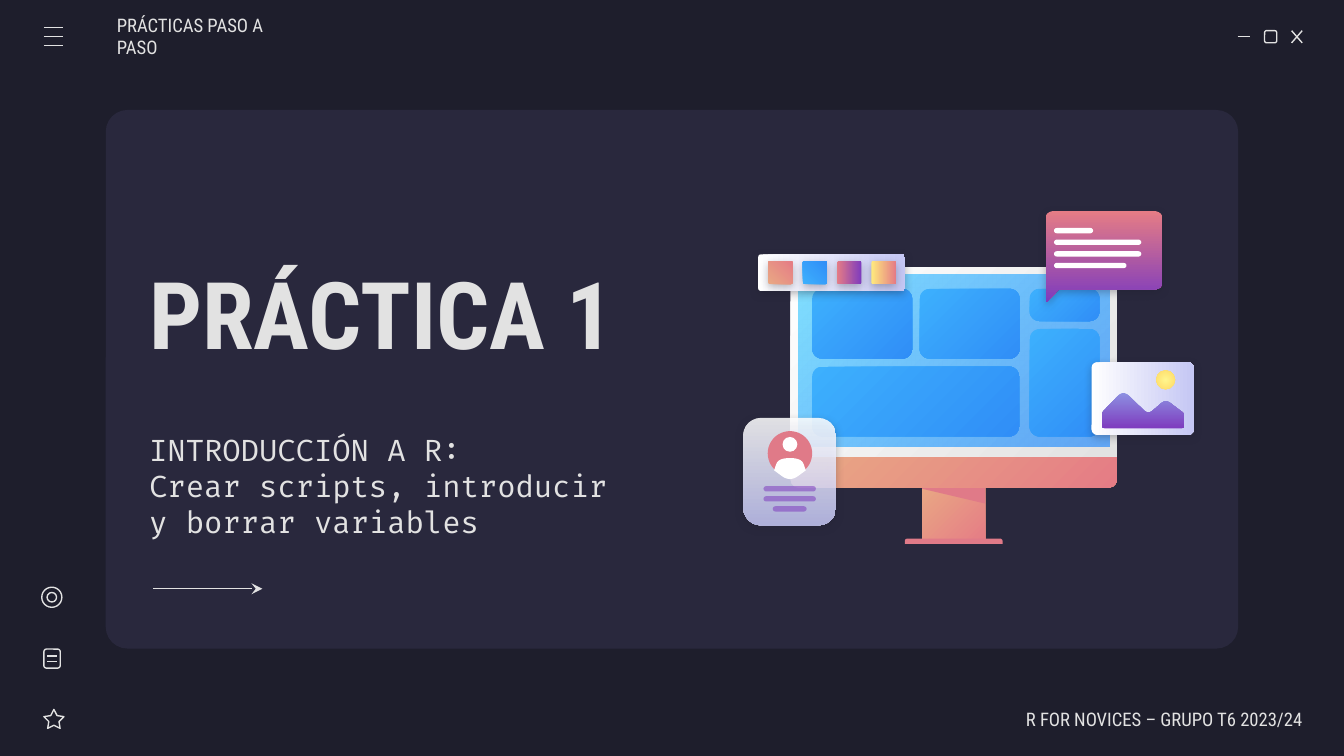
from dataclasses import dataclass

import pptx
import pptx.dml.color
import pptx.enum.shapes
import pptx.enum.text
import pptx.oxml.ns
import pptx.oxml.xmlchemy
import pptx.util

Cm = pptx.util.Cm
Pt = pptx.util.Pt
qn = pptx.oxml.ns.qn
KIND = pptx.enum.shapes.MSO_SHAPE
ALIGN = pptx.enum.text.PP_ALIGN

COLORS = {
    "night": "1E1E2C", "panel": "29283D", "light": "E2E2E2", "white": "FFFFFF",
    "peach": "E9A984", "coral": "E57C85", "rose": "E07A88", "purple": "7E3BBE",
    "lilac": "C5C7F4", "iris": "8D90E1", "cyan": "80DFFF", "azure": "318FFA",
    "sky": "3DB0FD", "blue": "308EF7", "lemon": "FFF68E", "gold": "FFD966",
    "yellow": "FFEA7D",
}


@dataclass
class Box:
    left: float
    top: float
    width: float
    height: float

    def inner(self, left, top, width, height):
        return Box(self.left + left, self.top + top, width, height)

    def lengths(self):
        return [Cm(value) for value in (self.left, self.top, self.width, self.height)]


@dataclass
class Gradient:
    start: str
    end: str
    angle: int = 45
    opacity: tuple = (100, 100)
    radial: bool = False


WARM = Gradient("peach", "coral")
TILE = Gradient("sky", "blue")
CARD = Gradient("white", "lilac", 0)


def rgb(name):
    return pptx.dml.color.RGBColor.from_string(COLORS[name])


def add_xml(parent, tag, **attributes):
    child = pptx.oxml.xmlchemy.OxmlElement(tag)
    for name, value in attributes.items():
        child.set(name, str(value))
    parent.append(child)
    return child


def paint(shape, fill, opacity=100, line=None, shadow=False):
    if isinstance(fill, Gradient):
        shape.fill.gradient()
        shape.fill.gradient_angle = (360 - fill.angle) % 360
        for stop, name in zip(shape.fill.gradient_stops, (fill.start, fill.end)):
            stop.color.rgb = rgb(name)
        opacities = fill.opacity
        if fill.radial:
            linear = next(shape._element.spPr.iter(qn("a:lin")))
            parent = linear.getparent()
            parent.remove(linear)
            circle = add_xml(parent, "a:path", path="circle")
            add_xml(circle, "a:fillToRect", l=50000, t=50000, r=50000, b=50000)
    elif fill:
        shape.fill.solid()
        shape.fill.fore_color.rgb = rgb(fill)
        opacities = (opacity,)
    else:
        shape.fill.background()
        opacities = ()
    for color, share in zip(list(shape._element.spPr.iter(qn("a:srgbClr"))), opacities):
        if share < 100:
            add_xml(color, "a:alpha", val=share * 1000)
    if line:
        shape.line.color.rgb = rgb(line)
        shape.line.width = Pt(0.75)
    else:
        shape.line.fill.background()
    shape.shadow.inherit = False
    if shadow:
        effects = shape._element.spPr.find(qn("a:effectLst"))
        outer = add_xml(effects, "a:outerShdw", blurRad=int(Pt(4.5)), dist=int(Pt(1.5)),
                        dir=5400000, algn="bl", rotWithShape=0)
        add_xml(add_xml(outer, "a:srgbClr", val=COLORS["night"]), "a:alpha", val=30000)


def add_preset(slide, kind, box, fill=None, radii=(), **style):
    shape = slide.shapes.add_shape(kind, *box.lengths())
    for index, radius in enumerate(radii):
        shape.adjustments[index] = radius / min(box.width, box.height)
    paint(shape, fill, **style)
    return shape


def add_rounded(slide, box, fill=None, radius=0.05, **style):
    return add_preset(slide, KIND.ROUNDED_RECTANGLE, box, fill, (radius,), **style)


def add_outline(slide, box, corners, fill, **style):
    points = []
    for index, (x, y, radius) in enumerate(corners):
        ends = []
        for other in (corners[index - 1], corners[(index + 1) % len(corners)]):
            dx, dy = other[0] - x, other[1] - y
            share = min(0.5, radius / (dx * dx + dy * dy) ** 0.5)
            ends.append((x + dx * share, y + dy * share))
        (ax, ay), (bx, by) = ends
        for t in [step / 8 for step in range(9)] if radius else [0]:
            points.append(tuple(
                Cm(base + (1 - t) ** 2 * a + 2 * t * (1 - t) * c + t * t * b)
                for base, a, c, b in ((box.left, ax, x, bx), (box.top, ay, y, by))))
    builder = slide.shapes.build_freeform(*points[0], scale=1.0)
    builder.add_line_segments(points[1:], close=True)
    paint(builder.convert_to_shape(), fill, **style)


def add_line(slide, box, x1, y1, x2, y2, arrow=False):
    line = slide.shapes.add_connector(
        pptx.enum.shapes.MSO_CONNECTOR.STRAIGHT, Cm(box.left + x1), Cm(box.top + y1),
        Cm(box.left + x2), Cm(box.top + y2))
    line.line.color.rgb = rgb("light")
    line.line.width = Pt(0.75)
    properties = line._element.spPr
    if arrow:
        add_xml(properties.find(qn("a:ln")), "a:tailEnd", type="stealth")
    add_xml(properties, "a:effectLst")


def add_text(slide, box, lines, size, font="Roboto Condensed", bold=False,
             align=ALIGN.LEFT, left=0.25, right=0.25):
    frame = slide.shapes.add_textbox(*box.lengths()).text_frame
    frame.word_wrap = True
    frame.vertical_anchor = pptx.enum.text.MSO_ANCHOR.MIDDLE
    frame.margin_left, frame.margin_right = Cm(left), Cm(right)
    frame.margin_top = frame.margin_bottom = Cm(0.25)
    frame.text = "\n".join(lines)
    for paragraph in frame.paragraphs:
        paragraph.alignment = align
        paragraph.font.name = font
        paragraph.font.size = Pt(size)
        paragraph.font.bold = bold
        paragraph.font.color.rgb = rgb("light")


def draw_window_buttons(slide, box):
    add_line(slide, box, 0, 0.11, 0.23, 0.11)
    add_rounded(slide, box.inner(0.51, 0, 0.23, 0.23), radius=0.04, line="light")
    add_line(slide, box, 1.02, 0, 1.22, 0.23)
    add_line(slide, box, 1.22, 0, 1.02, 0.23)


def draw_menu(slide, box):
    for row in range(3):
        y = row * box.height / 2
        add_line(slide, box, 0, y, box.width, y)


def draw_side_icons(slide, box):
    add_preset(slide, KIND.OVAL, box.inner(0, 0, 0.38, 0.38), line="light")
    add_preset(slide, KIND.OVAL, box.inner(0.1, 0.1, 0.18, 0.18), line="light")
    add_rounded(slide, box.inner(0.04, 1.17, 0.31, 0.36), line="light")
    for y in (1.3, 1.4):
        add_line(slide, box, 0.1, y, 0.28, y)
    star = add_preset(slide, KIND.STAR_5_POINT, box.inner(0.04, 2.31, 0.38, 0.36), line="light")
    star.adjustments[0] = 0.254


def draw_monitor(slide, box):
    add_preset(slide, KIND.RECTANGLE, box.inner(2.49, 4.11, 1.19, 1.09), WARM)
    add_preset(slide, KIND.ROUND_2_SAME_RECTANGLE, box.inner(2.16, 5.13, 1.85, 0.1), "rose",
               (0.05, 0))
    add_outline(slide, box, [(2.49, 4.11, 0), (2.49, 4.19, 0), (3.68, 4.47, 0), (3.68, 4.11, 0)],
                "rose")
    add_preset(slide, KIND.ROUND_2_SAME_RECTANGLE, box.inner(0, 3.56, box.width, 0.61), WARM,
               (0, 0.16))
    add_preset(slide, KIND.ROUND_2_SAME_RECTANGLE, box.inner(0, 0, box.width, 3.58),
               Gradient("white", "light"), (0.16, 0))
    add_preset(slide, KIND.RECTANGLE, box.inner(0.15, 0.15, 5.87, 3.25),
               Gradient("cyan", "azure", opacity=(100, 72)))
    for tile in ((0.41, 0.41, 1.89, 1.32), (0.41, 1.88, 3.91, 1.32), (2.44, 0.41, 1.89, 1.32),
                 (4.52, 0.41, 1.32, 0.61), (4.52, 1.17, 1.32, 2.03)):
        add_rounded(slide, box.inner(*tile), TILE, 0.19)


def draw_speech_bubble(slide, box):
    base = 1.48
    add_outline(slide, box, [
        (0, 0, 0.17), (0, box.height, 0.05), (0.25, base, 0), (box.width, base, 0.17),
        (box.width, 0, 0.17)], Gradient("coral", "purple", 90), shadow=True)
    for row, width in enumerate((0.74, 1.65, 1.65, 1.37)):
        add_rounded(slide, box.inner(0.16, 0.32 + row * 0.22, width, 0.1), "white")


def draw_profile_card(slide, box):
    add_rounded(slide, box, Gradient("white", "lilac", 90, (86, 86)), 0.33, shadow=True)
    add_preset(slide, KIND.OVAL, box.inner(0.46, 0.25, 0.84, 0.84), "rose")
    add_preset(slide, KIND.OVAL, box.inner(0.74, 0.36, 0.28, 0.28), "white")
    add_outline(slide, box, [
        (0.58, 0.99, 0), (0.66, 0.76, 0.2), (1.1, 0.76, 0.2), (1.18, 0.99, 0),
        (0.88, 1.21, 0.3)], "white")
    for row, width in enumerate((0.99, 0.99, 0.64)):
        add_rounded(slide, box.inner((box.width - width) / 2, 1.29 + row * 0.19, width, 0.1),
                    "purple", opacity=54)


def draw_photo_card(slide, box):
    add_rounded(slide, box, CARD, 0.1, shadow=True)
    add_outline(slide, box, [
        (0.2, 0.95, 0.04), (0.6, 0.53, 0.14), (1.07, 0.99, 0.12), (1.4, 0.7, 0.12),
        (1.75, 0.97, 0.04), (1.75, 1.25, 0.07), (0.2, 1.25, 0.07)],
        Gradient("iris", "purple", 90))
    add_preset(slide, KIND.OVAL, box.inner(1.22, 0.15, 0.36, 0.36),
               Gradient("lemon", "gold", radial=True))


def draw_swatch_bar(slide, box):
    add_rounded(slide, box, CARD, shadow=True)
    swatches = (Gradient("peach", "coral", 315), Gradient("sky", "blue", 315),
                Gradient("coral", "purple", 0), Gradient("yellow", "coral", 0))
    for column, fill in enumerate(swatches):
        add_rounded(slide, box.inner(0.19 + column * 0.65, 0.13, 0.46, 0.43), fill, 0.03,
                    shadow=True)


def draw_heading(slide, box):
    add_text(slide, box.inner(0, 0, 11.35, 4.47), ["PRÁCTICA 1"], 50, bold=True)
    add_text(slide, box.inner(0, 4.93, 9.42, 1.17),
             ["INTRODUCCIÓN A R:", "Crear scripts, introducir y borrar variables"],
             16, "Fira Code")
    add_line(slide, box, 0.33, 7.47, 2.39, 7.47, arrow=True)


def main():
    presentation = pptx.Presentation()
    presentation.slide_width, presentation.slide_height = Cm(25.4), Cm(14.29)
    slide = presentation.slides.add_slide(presentation.slide_layouts[6])
    slide.background.fill.solid()
    slide.background.fill.fore_color.rgb = rgb("night")
    add_rounded(slide, Box(2, 2.08, 21.4, 10.18), "panel", 0.41)
    draw_window_buttons(slide, Box(23.39, 0.58, 1.22, 0.23))
    draw_heading(slide, Box(2.57, 3.66, 11.35, 7.47))
    add_text(slide, Box(2.21, 0.3, 3.63, 0.76), ["PRÁCTICAS PASO A PASO"], 10, left=0)
    draw_monitor(slide, Box(14.94, 5.05, 6.17, 5.23))
    draw_speech_bubble(slide, Box(19.76, 3.99, 2.21, 1.74))
    draw_menu(slide, Box(0.83, 0.52, 0.37, 0.34))
    draw_profile_card(slide, Box(14.05, 7.9, 1.75, 2.03))
    draw_photo_card(slide, Box(20.63, 6.85, 1.93, 1.37))
    draw_swatch_bar(slide, Box(14.33, 4.81, 2.77, 0.69))
    draw_side_icons(slide, Box(0.79, 11.1, 0.42, 2.67))
    add_text(slide, Box(18.62, 13.21, 5.99, 0.76), ["R FOR NOVICES – GRUPO T6 2023/24"], 10,
             align=ALIGN.RIGHT, right=0)
    presentation.save("out.pptx")


if __name__ == "__main__":
    main()
